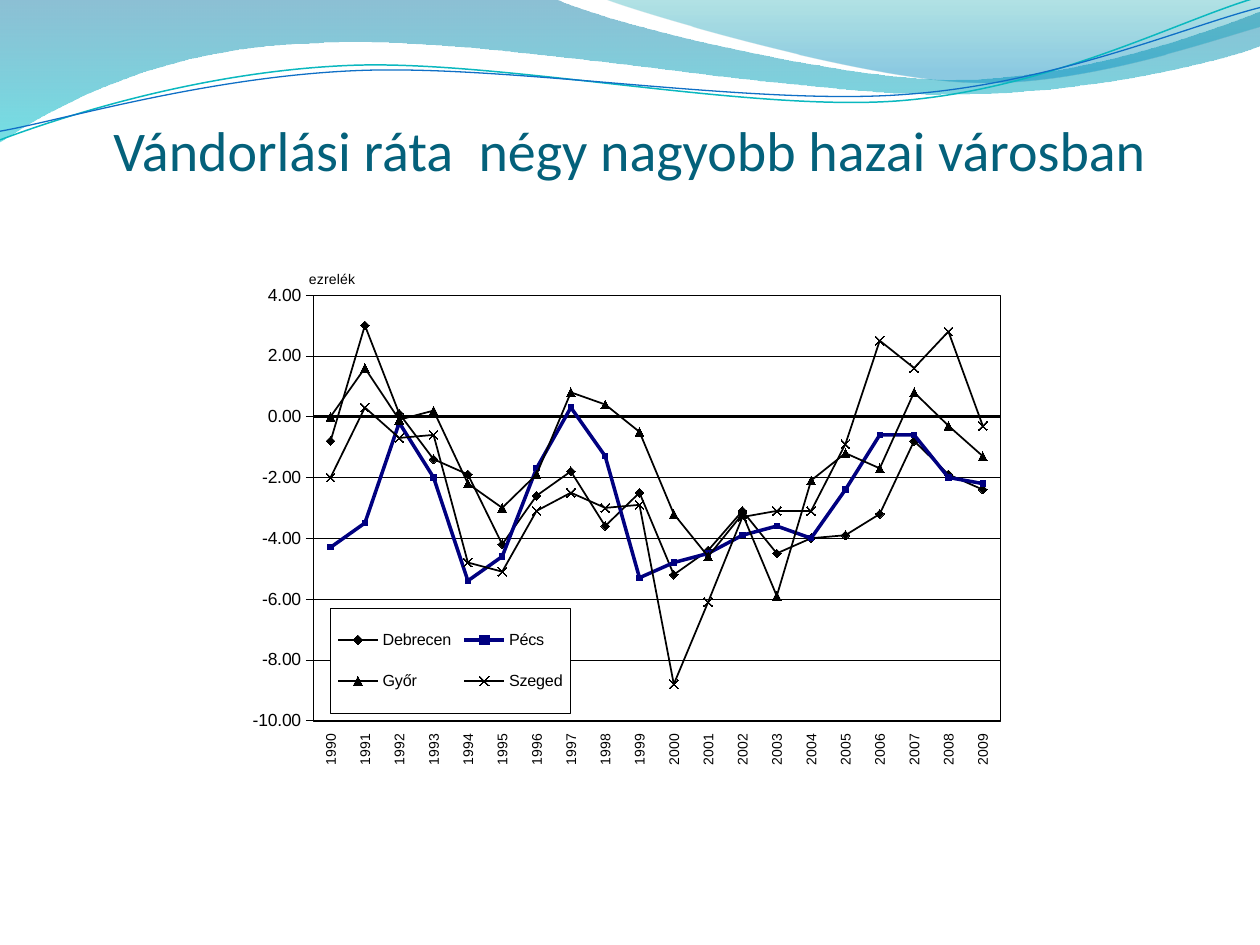
from lxml import etree
from pptx import Presentation
from pptx.chart.data import CategoryChartData
from pptx.dml.color import RGBColor
from pptx.enum.chart import (XL_CHART_TYPE, XL_LEGEND_POSITION, XL_MARKER_STYLE,
                             XL_TICK_LABEL_POSITION, XL_TICK_MARK)
from pptx.enum.text import MSO_ANCHOR, MSO_AUTO_SIZE, PP_ALIGN
from pptx.oxml import parse_xml
from pptx.oxml.ns import qn
from pptx.util import Pt

LINE_MARKERS = XL_CHART_TYPE.LINE_MARKERS
RIGHT = XL_LEGEND_POSITION.RIGHT
DIAMOND, SQUARE = XL_MARKER_STYLE.DIAMOND, XL_MARKER_STYLE.SQUARE
TRIANGLE, CROSS = XL_MARKER_STYLE.TRIANGLE, XL_MARKER_STYLE.X
LOW = XL_TICK_LABEL_POSITION.LOW
TICK_NONE, TICK_CROSS = XL_TICK_MARK.NONE, XL_TICK_MARK.CROSS
MIDDLE, CENTER, NO_FIT = MSO_ANCHOR.MIDDLE, PP_ALIGN.CENTER, MSO_AUTO_SIZE.NONE
CHART_NS = "http://schemas.openxmlformats.org/drawingml/2006/chart"
DRAWING_NS = "http://schemas.openxmlformats.org/drawingml/2006/main"


def rgb(color):
    return RGBColor.from_string(color)


def manual_layout(x, y, w=None, h=None, inner=False):
    """Chart layout in fractions of the chart area."""
    parts = [("layoutTarget", "inner")] if inner else []
    parts += [("xMode", "edge"), ("yMode", "edge"), ("x", x), ("y", y)]
    if w:
        parts += [("w", w), ("h", h)]
    inside = "".join(f'<c:{tag} val="{value}"/>' for tag, value in parts)
    return parse_xml(f'<c:layout xmlns:c="{CHART_NS}"><c:manualLayout>'
                     f'{inside}</c:manualLayout></c:layout>')


prs = Presentation()
prs.slide_width, prs.slide_height = Pt(720), Pt(540)
slide = prs.slides.add_slide(prs.slide_layouts[5])

# Waves along the top: one point is a corner, three points are a Bezier curve.
# Gradient stops are position, colour, opacity in percent.
waves = [
    {"start": (0, 0),
     "steps": [[(317, -0.7)], [(342.7, 12.2), (478, 45.4), (545.8, 45.4)],
               [(614.2, 45.4), (689.8, 18.7), (720, 6.5)], [(720.7, 25.9)],
               [(707.8, 31.7), (626.4, 54.7), (537.1, 54)],
               [(447.8, 54), (275, 20.2), (185, 24.5)],
               [(92.9, 25.9), (33.1, 59.8), (-0.7, 81.4)], [(0, 0)]],
     "stops": [(0, "0074A1", 45), (1, "00C6CF", 55)]},
    {"start": (344.9, -0.7),
     "steps": [[(366.5, 7.9), (491, 44.6), (553.7, 46.8)],
               [(616.3, 49.7), (691.9, 23), (720, 15.1)], [(720, 0)], [(344.9, -0.7)]],
     "stops": [(0, "00A1A9", 30), (0.8, "008BBF", 45)]},
    {"start": (-1.4, 63),
     "steps": [[(33.8, 51.7), (114.1, 29.4), (199.8, 29.9)],
               [(284.8, 30.3), (425.9, 67.3), (512.5, 64.9)],
               [(599.1, 62.4), (676.5, 25.7), (720.2, 15.5)]],
     "line": ("0AB8BF", 0.85)},
    {"start": (-1.1, 58),
     "steps": [[(32.9, 53.8), (118.3, 32.5), (204.1, 33)],
               [(290.6, 33.4), (428.9, 63.8), (515.5, 61.4)],
               [(601.4, 59.6), (678.4, 30.1), (721.4, 21.3)]],
     "line": ("0F6FC6", 0.75)},
]
for wave in waves:
    builder = slide.shapes.build_freeform(*(Pt(v) for v in wave["start"]))
    builder.add_line_segments([(Pt(x), Pt(y)) for step in wave["steps"] for x, y in step],
                              close="stops" in wave)
    band = builder.convert_to_shape()
    band.shadow.inherit = False
    # Join the three points of each curve into one Bezier segment
    segments = iter(list(band._element.iter(qn("a:lnTo"))))
    for step in wave["steps"]:
        points = [next(segments) for _ in step]
        if len(points) == 3:
            curve = etree.Element(qn("a:cubicBezTo"))
            points[0].addprevious(curve)
            for point in points:
                curve.append(point[0])
                point.getparent().remove(point)
    if "stops" in wave:
        band.line.fill.background()
        band.fill.gradient()
        band.fill.gradient_angle = 270
        for stop, (position, color, opacity) in zip(band.fill.gradient_stops, wave["stops"]):
            stop.position = position
            stop.color.rgb = rgb(color)
            color_node = stop.color._xFill.find(qn("a:srgbClr"))
            etree.SubElement(color_node, qn("a:alpha"), val=str(opacity * 1000))
    else:
        color, width = wave["line"]
        band.rotation = 357.3
        band.fill.background()
        band.line.color.rgb = rgb(color)
        band.line.width = Pt(width)

# Title
title = slide.shapes.title
title.left, title.top, title.width, title.height = Pt(36), Pt(55.4), Pt(648), Pt(56.2)
title_format = {"margin_left": 0, "margin_right": 0, "margin_top": Pt(3.6), "margin_bottom": 0,
                "vertical_anchor": MIDDLE, "word_wrap": True, "auto_size": NO_FIT}
for name, value in title_format.items():
    setattr(title.text_frame, name, value)
title.text_frame.text = "Vándorlási ráta  négy nagyobb hazai városban"
heading = title.text_frame.paragraphs[0]
heading.alignment = CENTER
heading_font = heading.runs[0].font
heading_font.name, heading_font.size = "Calibri", Pt(32)
heading_font.color.rgb = rgb("04617B")

# Migration rates: name, colour, line width, marker, marker size, values
cities = [
    ("Debrecen", "000000", 1, DIAMOND, 5,
     [-0.8, 3, 0.1, -1.4, -1.9, -4.2, -2.6, -1.8, -3.6, -2.5,
      -5.2, -4.4, -3.1, -4.5, -4, -3.9, -3.2, -0.8, -1.9, -2.4]),
    ("Pécs", "000080", 2, SQUARE, 3,
     [-4.3, -3.5, -0.2, -2, -5.4, -4.6, -1.7, 0.3, -1.3, -5.3,
      -4.8, -4.5, -3.9, -3.6, -4, -2.4, -0.6, -0.6, -2, -2.2]),
    ("Győr", "000000", 1, TRIANGLE, 5,
     [0, 1.6, -0.1, 0.2, -2.2, -3, -1.9, 0.8, 0.4, -0.5,
      -3.2, -4.6, -3.2, -5.9, -2.1, -1.2, -1.7, 0.8, -0.3, -1.3]),
    ("Szeged", "000000", 1, CROSS, 5,
     [-2, 0.3, -0.7, -0.6, -4.8, -5.1, -3.1, -2.5, -3, -2.9,
      -8.8, -6.1, -3.3, -3.1, -3.1, -0.9, 2.5, 1.6, 2.8, -0.3]),
]
rates = CategoryChartData(number_format="0.0")
rates.categories = [str(year) for year in range(1990, 2010)]
for name, *_, values in cities:
    rates.add_series(name, values)
chart = slide.shapes.add_chart(LINE_MARKERS, Pt(127.4), Pt(145.4), Pt(453.6), Pt(306), rates).chart
chart.has_title = False
chart.plots[0].vary_by_categories = False

for city, (_, color, width, marker, size, _) in zip(chart.series, cities):
    city.smooth = False
    city.format.line.color.rgb = rgb(color)
    city.format.line.width = Pt(width)
    city.marker.style, city.marker.size = marker, size
    city.marker.format.fill.solid()
    city.marker.format.fill.fore_color.rgb = rgb(color)
    city.marker.format.line.color.rgb = rgb(color)

# Axes
years, per_mille = chart.category_axis, chart.value_axis
years.tick_label_position = per_mille.tick_label_position = LOW
years.major_tick_mark = TICK_NONE
scale_format = {"minimum_scale": -10, "maximum_scale": 4, "major_unit": 2,
                "major_tick_mark": TICK_CROSS, "has_major_gridlines": True, "has_title": True}
for name, value in scale_format.items():
    setattr(per_mille, name, value)
per_mille.tick_labels.number_format = "0.00"
per_mille.tick_labels.number_format_is_linked = False
for line, width in ((years.format.line, 2), (per_mille.format.line, 0.25),
                    (per_mille.major_gridlines.format.line, 0.25)):
    line.color.rgb = rgb("000000")
    line.width = Pt(width)

unit = per_mille.axis_title
unit.text_frame.text = "ezrelék"
unit.text_frame._txBody.bodyPr.set("rot", "0")
for layout in unit._element.findall(qn("c:layout")):
    unit._element.remove(layout)
unit._element.find(qn("c:tx")).addnext(manual_layout(0.105, 0.024))

# Legend inside the plot
chart.has_legend = True
legend = chart.legend
legend.position, legend.include_in_layout = RIGHT, False
for layout in legend._element.findall(qn("c:layout")):
    legend._element.remove(layout)
legend._element.find(qn("c:legendPos")).addnext(manual_layout(0.135, 0.66, 0.303, 0.197))

# Fonts
unit_font = unit.text_frame.paragraphs[0].runs[0].font
for font, size in ((chart.font, 8), (years.tick_labels.font, 8), (per_mille.tick_labels.font, 10),
                   (legend.font, 9.2), (unit_font, 8)):
    font.name, font.size, font.bold = "Arial", Pt(size), False
    font.color.rgb = rgb("000000")
years._element.find(qn("c:txPr")).find(qn("a:bodyPr")).set("rot", "-5400000")

# White areas: chart without border, plot and legend with one
chart_space = chart._chartSpace
plot_area = chart_space.chart.plotArea
for layout in plot_area.findall(qn("c:layout")):
    plot_area.remove(layout)
plot_area.insert(0, manual_layout(0.114, 0.076, 0.865, 0.795, inner=True))
boxed = '<a:solidFill><a:srgbClr val="000000"/></a:solidFill>'
for border, place in (("<a:noFill/>", chart_space.chart.addnext), (boxed, plot_area.append),
                      (boxed, legend._element.find(qn("c:txPr")).addprevious)):
    place(parse_xml(f'<c:spPr xmlns:c="{CHART_NS}" xmlns:a="{DRAWING_NS}"><a:solidFill>'
                    f'<a:srgbClr val="FFFFFF"/></a:solidFill><a:ln w="{Pt(0.25)}">{border}</a:ln></c:spPr>'))

prs.save("out.pptx")
